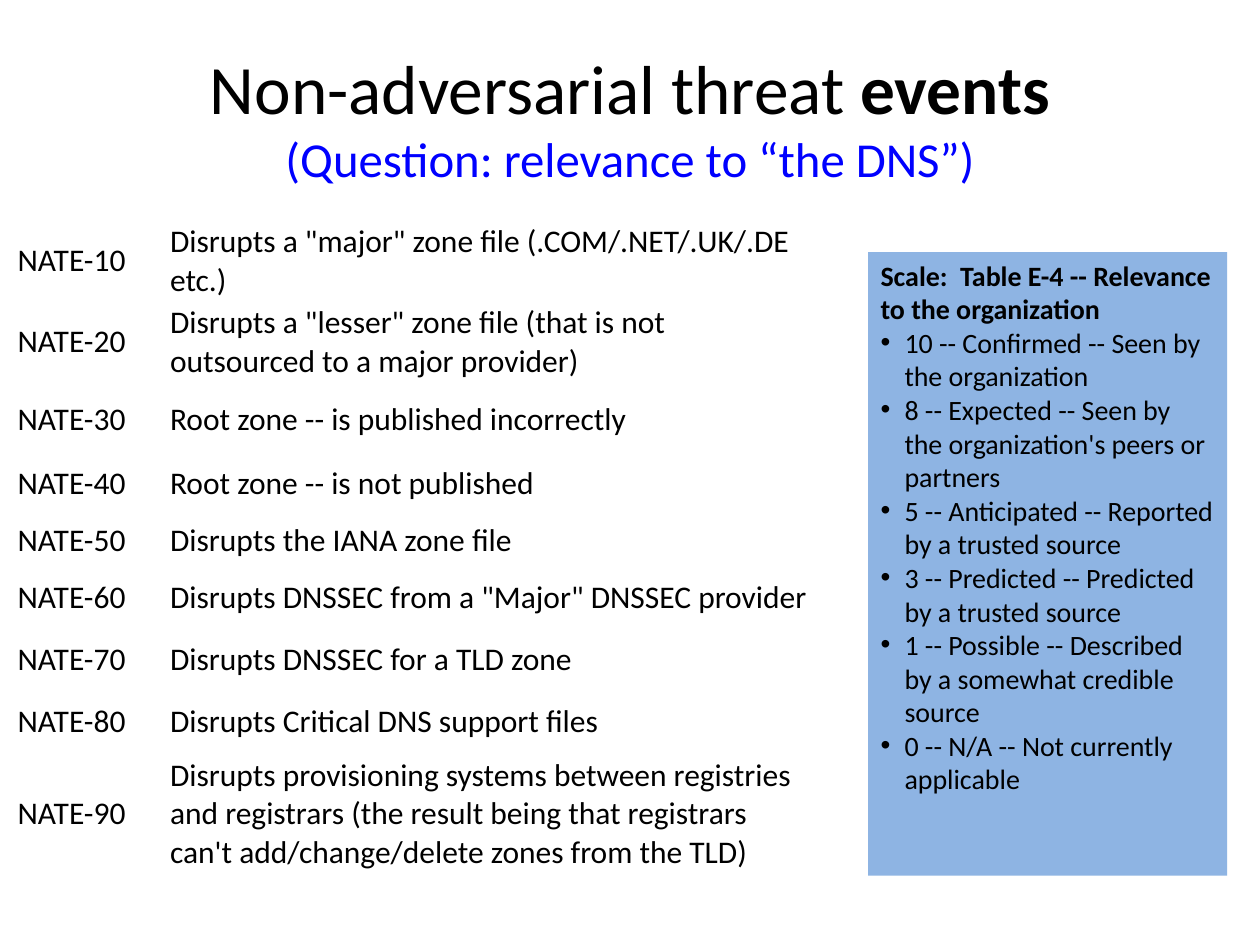
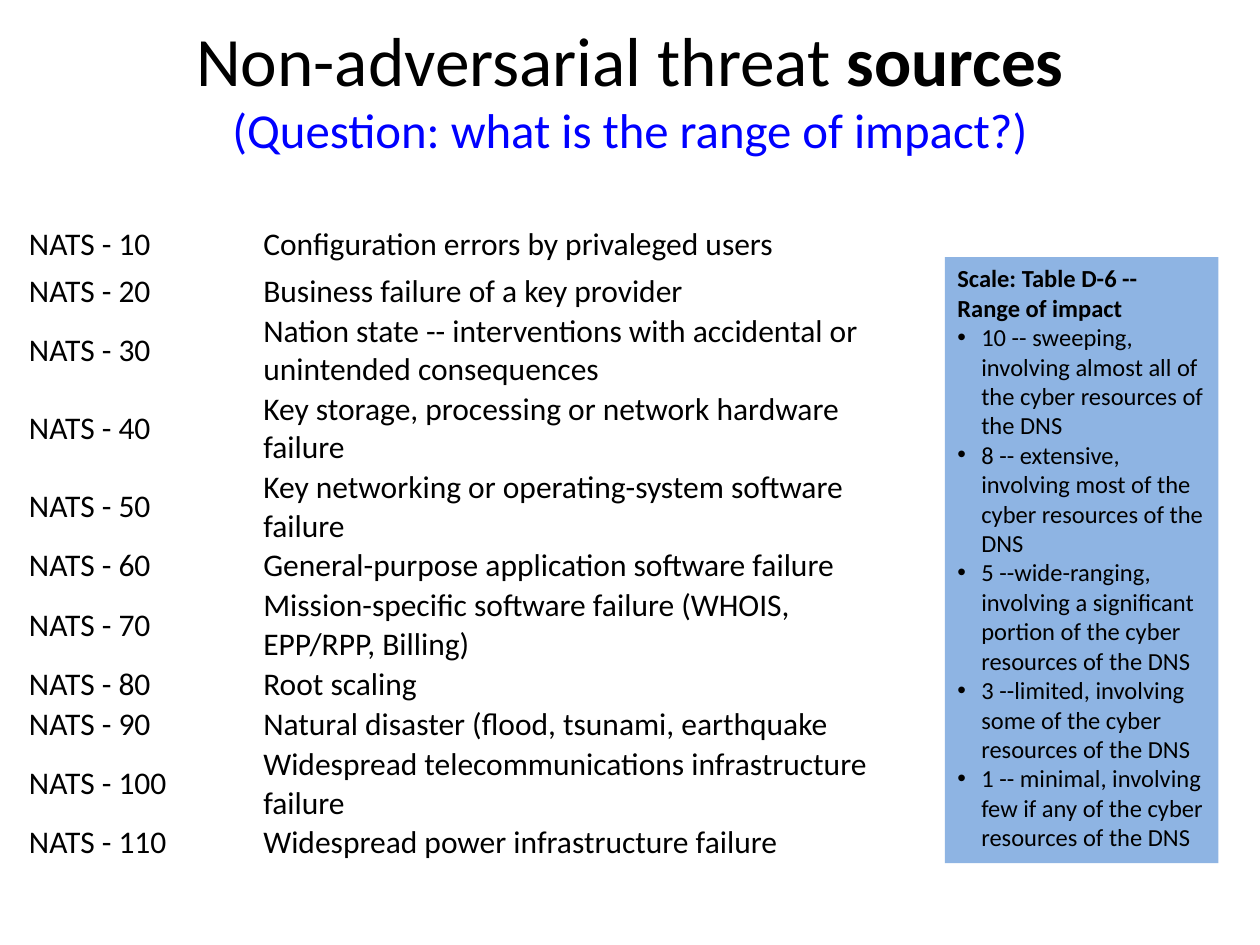
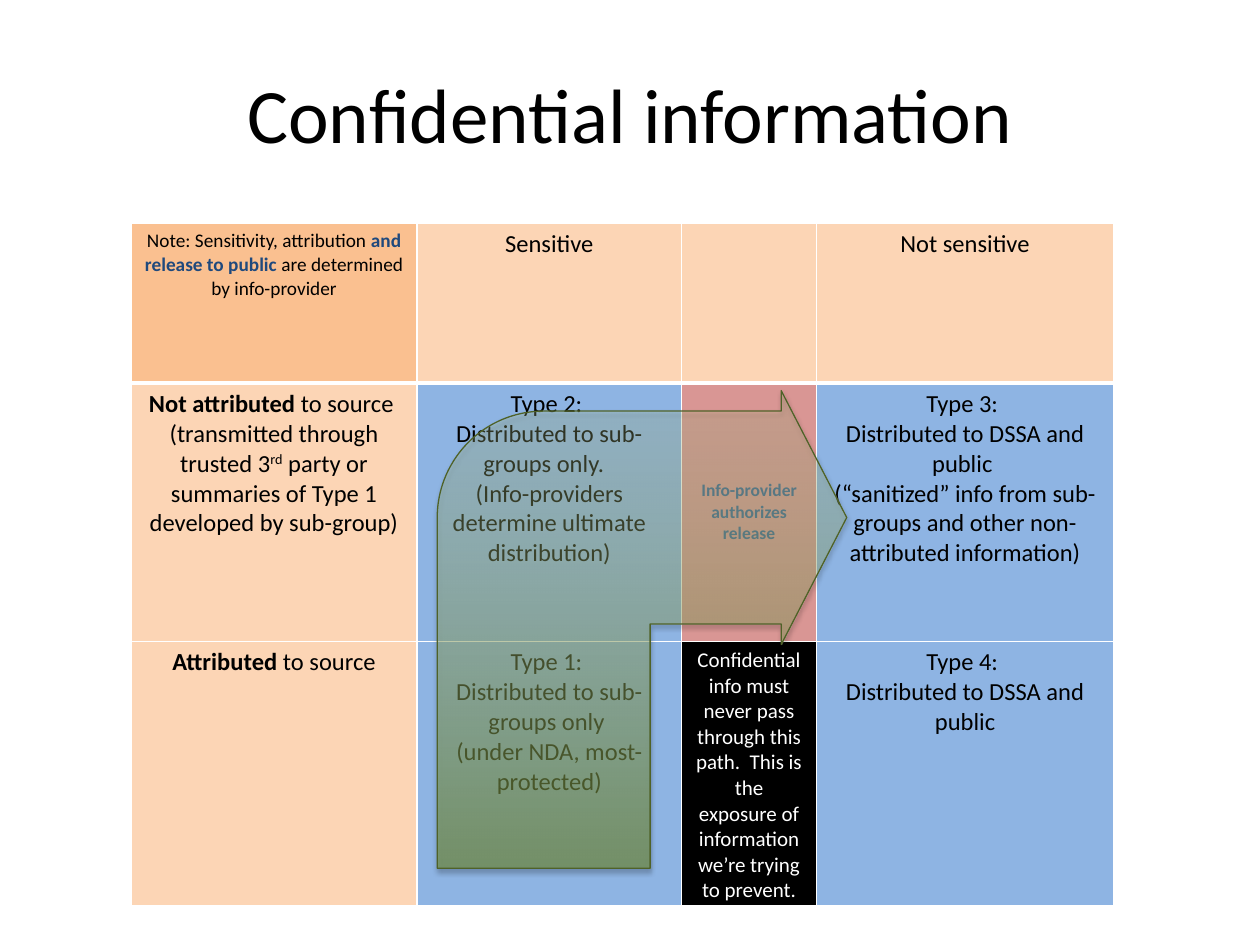
from lxml import etree
from pptx import Presentation
from pptx import util as u
from pptx.dml.color import RGBColor
from pptx.enum import shapes, text
from pptx.oxml import ns

HUES = {
    "ink": "000000", "white": "FFFFFF", "ask": "0000FF", "sky": "8EB4E3",
    "peach": "FCD5B5", "amber": "FAC090", "rose": "D99694", "navy": "1F497D",
    "steel": "376092", "moss": "77933C", "lime": "C3D69B", "fern": "4F6228",
}
FONT = "Calibri"
MID = text.MSO_ANCHOR.MIDDLE
TOP = text.MSO_ANCHOR.TOP
CENTER = text.PP_ALIGN.CENTER
LEFT = text.PP_ALIGN.LEFT


def hue(name):
    return RGBColor.from_string(HUES[name])


def node(root, tag, **attrs):
    return etree.SubElement(root, ns.qn(tag), {k: str(v) for k, v in attrs.items()})


def write(para, words, size=18, color="ink", bold=False, base=0):
    for i, line in enumerate(words.split("\n")):
        if i:
            para.add_line_break()
        if not line:
            continue
        run = para.add_run()
        run.text = line
        font = run.font
        font.name, font.size, font.bold = FONT, u.Pt(size), bold
        font.color.rgb = hue(color)
        if base:
            run._r.get_or_add_rPr().set("baseline", str(base * 1000))


class Deck:
    def __init__(self):
        self.prs = Presentation()
        self.prs.slide_width, self.prs.slide_height = u.Inches(10), u.Inches(7.5)
        self.slide = None

    def page(self):
        self.slide = self.prs.slides.add_slide(self.prs.slide_layouts[6])

    def title(self, words, strong="", ask="", top=0.3, size=39.6):
        box = self.slide.shapes.add_textbox(*map(u.Inches, (0.5, top, 9, 1.25)))
        frame = box.text_frame
        frame.word_wrap = True
        frame.vertical_anchor = MID
        para = frame.paragraphs[0]
        para.alignment = CENTER
        write(para, words, size=size)
        if strong:
            write(para, strong, size=size, bold=True)
            write(para, "\n" + ask, size=27.9, color="ask")

    def shape(self, kind, box):
        form = self.slide.shapes.add_shape(kind, *map(u.Inches, box))
        form.shadow.inherit = False
        return form

    def scale(self, box, head, items, size):
        form = self.shape(shapes.MSO_SHAPE.RECTANGLE, box)
        form.fill.solid()
        form.fill.fore_color.rgb = hue("sky")
        form.line.fill.background()
        frame = form.text_frame
        frame.word_wrap = True
        frame.vertical_anchor = TOP
        for i, words in enumerate([head] + items):
            para = frame.add_paragraph() if i else frame.paragraphs[0]
            para.alignment = LEFT
            if i:
                props = para._p.get_or_add_pPr()
                dent = u.Inches(0.19)
                props.set("marL", str(dent))
                props.set("indent", str(-dent))
                node(props, "a:buFont", typeface="Arial")
                node(props, "a:buChar", char="•")
            write(para, words, size=size, bold=not i)

    def table(self, box, cols, rows):
        form = self.slide.shapes.add_table(len(rows), len(cols), *map(u.Inches, box))
        grid = form.table
        grid.first_row = grid.horz_banding = False
        for col, wide in zip(grid.columns, cols):
            col.width = u.Inches(wide)
        for row, tall in zip(grid.rows, rows):
            row.height = u.Inches(tall)
        form.height = u.Inches(box[3])
        return grid

    def listing(self, box, cols, rows, prefix, items):
        grid = self.table(box, cols, rows)
        for i, words in enumerate(items):
            for cell, line in zip(grid.rows[i].cells, (f"{prefix}{10 * (i + 1)}", words)):
                cell.margin_left = cell.margin_right = cell.margin_top = u.Inches(0.01)
                cell.margin_bottom = 0
                cell.vertical_anchor = MID
                cell.fill.background()
                write(cell.text_frame.paragraphs[0], line)

    def edge(self, cell, low):
        props = cell._tc.get_or_add_tcPr()
        for side, wide in zip("LRTB", (1, 1, 1, low)):
            line = node(props, f"a:ln{side}", w=u.Pt(wide))
            node(node(line, "a:solidFill"), "a:srgbClr", val=HUES["white"])

    def matrix(self, box, cols, rows, cells):
        grid = self.table(box, cols, rows)
        for i, row in enumerate(cells):
            for cell, (fill, runs) in zip(grid.rows[i].cells, row):
                self.edge(cell, 1 if i else 3)
                cell.fill.solid()
                cell.fill.fore_color.rgb = hue(fill)
                cell.vertical_anchor = MID if fill == "rose" else TOP
                para = cell.text_frame.paragraphs[0]
                para.alignment = CENTER
                for words, style in runs:
                    write(para, words, **{"size": 14, **style})

    def arrow(self, box, bends):
        form = self.shape(shapes.MSO_SHAPE.BENT_ARROW, box)
        for i, bend in enumerate(bends):
            form.adjustments[i] = bend
        form.fill.gradient()
        form.fill.gradient_angle = 90
        for stop, (name, alpha) in zip(form.fill.gradient_stops, (("moss", 63), ("lime", 22))):
            stop.color.rgb = hue(name)
        for tint, alpha in zip(form._element.spPr.iter(ns.qn("a:srgbClr")), (63, 22)):
            node(tint, "a:alpha", val=alpha * 1000)
        form.line.color.rgb = hue("fern")
        form.line.width = u.Pt(0.75)
        effects = form._element.spPr.find(ns.qn("a:effectLst"))
        shade = node(effects, "a:outerShdw", blurRad=u.Pt(3.1), dist=u.Pt(1.8),
                     dir=90 * 60000, rotWithShape=0)
        node(node(shade, "a:srgbClr", val=HUES["ink"]), "a:alpha", val=35000)


def events(deck):
    deck.page()
    deck.title("Non-adversarial threat ", "events", "(Question: relevance to “the DNS”)")
    deck.listing(
        (0.13, 1.76, 6.35, 5.19), (1.21, 5.14),
        (0.45, 0.68, 0.56, 0.45, 0.45, 0.45, 0.54, 0.45, 1.01), "NATE-", [
            'Disrupts a "major" zone file (.COM/.NET/.UK/.DE etc.)',
            'Disrupts a "lesser" zone file (that is not outsourced to a major provider)',
            "Root zone -- is published incorrectly",
            "Root zone -- is not published",
            "Disrupts the IANA zone file",
            'Disrupts DNSSEC from a "Major" DNSSEC provider',
            "Disrupts DNSSEC for a TLD zone",
            "Disrupts Critical DNS support files",
            "Disrupts provisioning systems between registries and registrars "
            "(the result being that registrars can't add/change/delete zones from the TLD)",
        ])
    deck.scale((6.89, 2, 2.85, 4.95), "Scale:  Table E-4 -- Relevance to the organization", [
        "10 -- Confirmed -- Seen by the organization",
        "8 -- Expected -- Seen by the organization's peers or partners",
        "5 -- Anticipated -- Reported by a trusted source",
        "3 -- Predicted -- Predicted by a trusted source",
        "1 -- Possible -- Described by a somewhat credible source",
        "0 -- N/A -- Not currently applicable",
    ], size=16)


def sources(deck):
    deck.page()
    deck.title("Non-adversarial threat ", "sources",
               "(Question: what is the range of impact?)", top=0.07)
    one, two = 0.32, 0.62
    deck.listing(
        (0.22, 1.72, 6.77, 5.14), (1.86, 4.91),
        (0.43, one, two, two, two, one, two, one, one, two, one), "NATS - ", [
            "Configuration errors by privaleged users",
            "Business failure of a key provider",
            "Nation state -- interventions with accidental or unintended consequences",
            "Key storage, processing or network hardware failure",
            "Key networking or operating-system software failure",
            "General-purpose application software failure",
            "Mission-specific software failure (WHOIS, EPP/RPP, Billing)",
            "Root scaling",
            "Natural disaster (flood, tsunami, earthquake",
            "Widespread telecommunications infrastructure failure",
            "Widespread power infrastructure failure",
        ])
    deck.scale((7.5, 2.04, 2.17, 4.81), "Scale: Table D-6 -- Range of impact", [
        "10 -- sweeping, involving almost all of the cyber resources of the DNS",
        "8 -- extensive, involving most of the cyber resources of the DNS",
        "5 --wide-ranging, involving a significant portion of the cyber resources of the DNS",
        "3 --limited, involving some of the cyber resources of the DNS",
        "1 -- minimal, involving few if any of the cyber resources of the DNS",
    ], size=14)


def secrets(deck):
    deck.page()
    deck.title("Confidential information", top=0.27, size=44)
    bold, small = {"bold": True}, {"size": 11}
    deck.matrix((1.04, 1.77, 7.79, 5.42), (2.27, 2.1, 1.07, 2.36), (1.27, 2.05, 2.05), [
        [
            ("amber", [("Note: Sensitivity, attribution ", small),
                       ("and release to public ", {"size": 11, "color": "navy", "bold": True}),
                       ("are determined by info-provider", small)]),
            ("peach", [("Sensitive", {})]),
            ("peach", []),
            ("peach", [("Not sensitive", {})]),
        ],
        [
            ("peach", [("Not attributed ", bold),
                       ("to source \n(transmitted through trusted 3", {}),
                       ("rd", {"base": 30}),
                       (" party or summaries of Type 1 developed by sub-group)", {})]),
            ("sky", [("Type 2: \nDistributed to sub-groups only.  \n"
                      "(Info-providers determine ultimate distribution)", {})]),
            ("rose", [("Info-provider authorizes release",
                       {"size": 10, "color": "steel", "bold": True})]),
            ("sky", [("Type 3: \nDistributed to DSSA and public \n(“sanitized” info from "
                      "sub-groups and other non-attributed information)", {})]),
        ],
        [
            ("peach", [("Attributed", bold), (" to source", {})]),
            ("sky", [("Type 1: \nDistributed to sub-groups only \n"
                      "(under NDA, most-protected)", {})]),
            ("ink", [("Confidential info must never pass through this path.  This is the "
                      "exposure of information we’re trying to prevent.",
                      {"size": 12, "color": "white"})]),
            ("sky", [("Type 4: \nDistributed to DSSA and public", {})]),
        ],
    ])
    deck.arrow((3.47, 3.1, 3.25, 3.79), (0.52, 0.31, 0.16, 0.26))


def main():
    deck = Deck()
    events(deck)
    sources(deck)
    secrets(deck)
    deck.prs.save("out.pptx")


if __name__ == "__main__":
    main()
